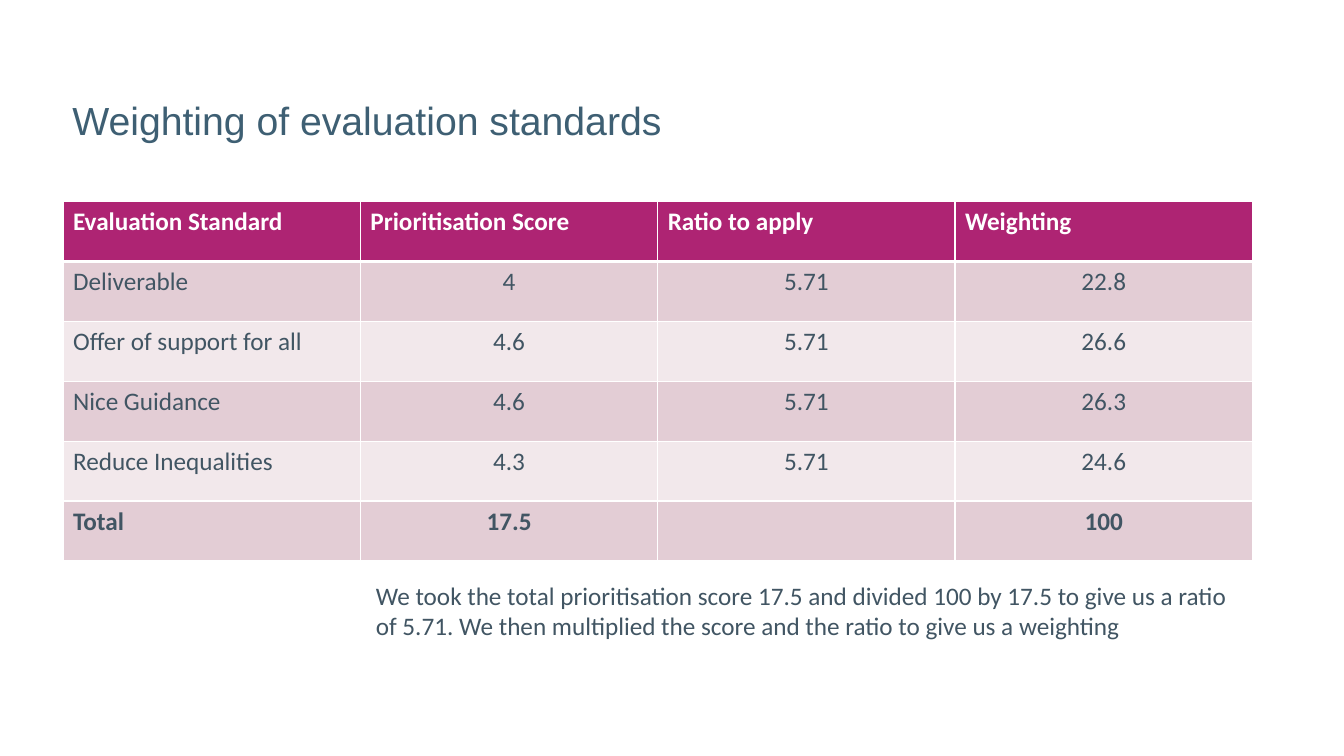
"""Build the slide on the weighting of evaluation standards."""
from lxml import etree
from pptx import Presentation
from pptx import util as u
from pptx.dml.color import RGBColor
from pptx.enum import text
from pptx.oxml.ns import qn

WHITE = RGBColor(0xFF, 0xFF, 0xFF)
MAGENTA = RGBColor(0xAE, 0x24, 0x73)
PINK = RGBColor(0xE3, 0xCD, 0xD5)
PALE_PINK = RGBColor(0xF2, 0xE8, 0xEB)
SLATE = RGBColor(0x41, 0x55, 0x63)
TITLE_BLUE = RGBColor(0x3E, 0x5F, 0x73)

SCORES = [
    ("Evaluation Standard", "Prioritisation Score", "Ratio to apply", "Weighting"),
    ("Deliverable", "4", "5.71", "22.8"),
    ("Offer of support for all", "4.6", "5.71", "26.6"),
    ("Nice Guidance", "4.6", "5.71", "26.3"),
    ("Reduce Inequalities", "4.3", "5.71", "24.6"),
    ("Total", "17.5", "", "100"),
]
NOTE = (
    "We took the total prioritisation score 17.5 and divided 100 by 17.5 to give us "
    "a ratio of 5.71. We then multiplied the score and the ratio to give us a weighting"
)


def add_span(para, words, font, size, color, bold=False):
    span = para.add_run()
    span.text = words
    span.font.name = font
    span.font.size = u.Pt(size)
    span.font.bold = bold
    span.font.color.rgb = color


def add_text(page, area, words, font, size, color, anchor, spacing=1.0):
    box = page.shapes.add_textbox(*map(u.Pt, area))
    frame = box.text_frame
    frame.word_wrap = True
    frame.vertical_anchor = anchor
    para = frame.paragraphs[0]
    para.line_spacing = spacing
    add_span(para, words, font, size, color)


def set_borders(cell, widths):
    props = cell._tc.get_or_add_tcPr()
    for side, width in widths.items():
        line = etree.SubElement(props, qn(f"a:ln{side}"), w=str(u.Pt(width)))
        fill = etree.SubElement(line, qn("a:solidFill"))
        etree.SubElement(fill, qn("a:srgbClr"), val=str(WHITE))


def fill_cell(cell, words, row, column):
    header, total = row == 0, row == len(SCORES) - 1
    set_borders(cell, {"L": 1, "R": 1, "T": 3 if row == 1 else 1, "B": 3 if header else 1})
    cell.fill.solid()
    cell.fill.fore_color.rgb = MAGENTA if header else PINK if row % 2 else PALE_PINK
    para = cell.text_frame.paragraphs[0]
    if column and not header:
        para.alignment = text.PP_ALIGN.CENTER
    if words:
        add_span(para, words, "Calibri", 18, WHITE if header else SLATE, header or total)


def add_score_table(page, area):
    left, top, width, height = area
    grid = page.shapes.add_table(len(SCORES), len(SCORES[0]), *map(u.Pt, area)).table
    for column in grid.columns:
        column.width = u.Pt(width / len(SCORES[0]))
    for row, entries in enumerate(SCORES):
        grid.rows[row].height = u.Pt(height / len(SCORES))
        for column, words in enumerate(entries):
            fill_cell(grid.cell(row, column), words, row, column)


def add_weighting_slide(deck):
    page = deck.slides.add_slide(deck.slide_layouts[6])
    add_score_table(page, (45, 144, 849.6, 256.8))
    add_text(page, (44.6, 67, 680, 41), "Weighting of evaluation standards",
             "Arial", 28, TITLE_BLUE, text.MSO_ANCHOR.MIDDLE, 0.9)
    add_text(page, (261.4, 411, 626.4, 51), NOTE,
             "Calibri", 18, SLATE, text.MSO_ANCHOR.TOP)


def main():
    deck = Presentation()
    deck.slide_width, deck.slide_height = u.Pt(960), u.Pt(540)
    add_weighting_slide(deck)
    deck.save("out.pptx")


if __name__ == "__main__":
    main()
